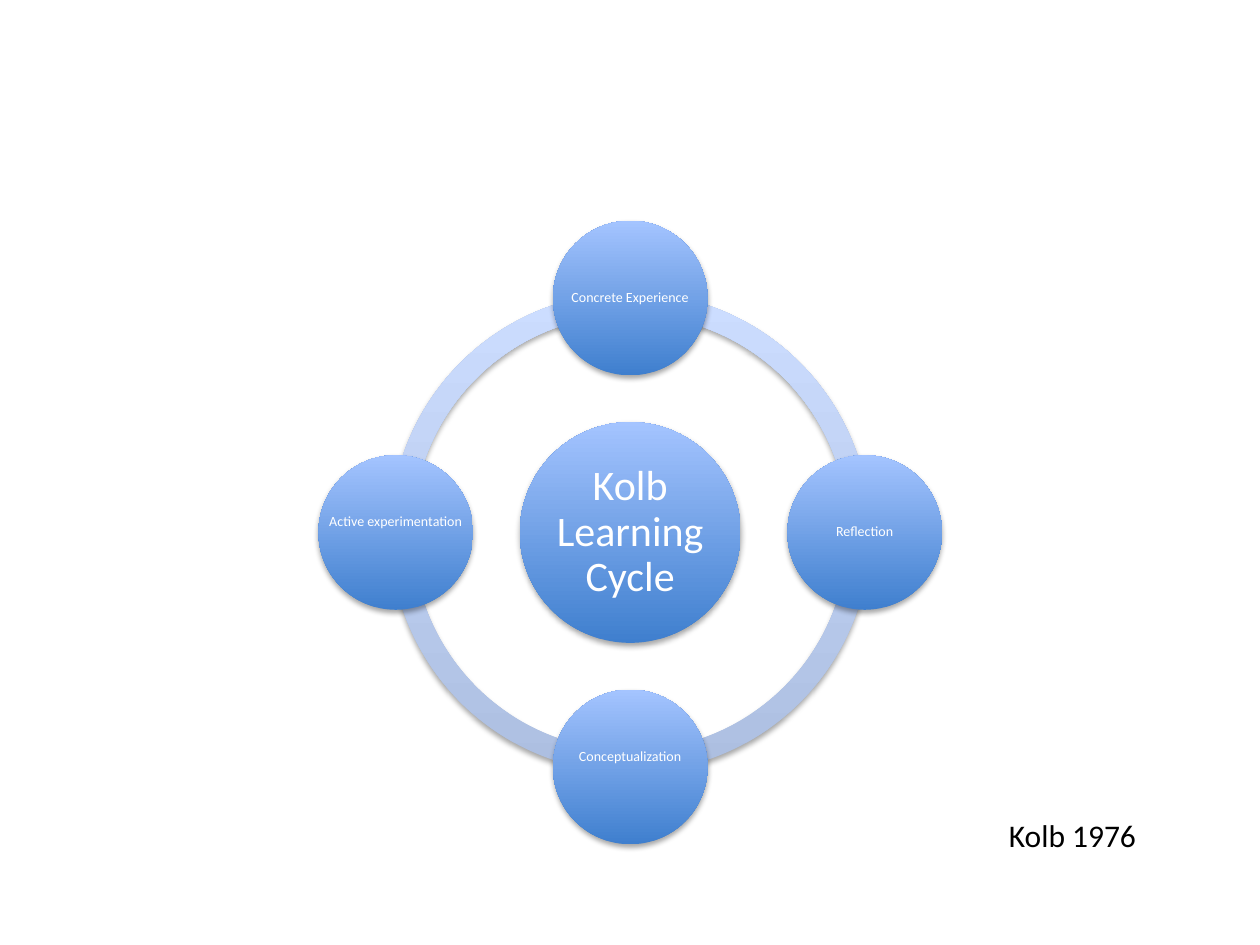
from lxml import etree
from pptx import Presentation
from pptx.dml.color import RGBColor
from pptx.enum.shapes import MSO_SHAPE
from pptx.enum.text import MSO_ANCHOR, PP_ALIGN
from pptx.oxml.ns import qn
from pptx.util import Cm, Pt

ARC, OVAL = MSO_SHAPE.BLOCK_ARC, MSO_SHAPE.OVAL
MIDDLE, TOP = MSO_ANCHOR.MIDDLE, MSO_ANCHOR.TOP
CENTER, LEFT = PP_ALIGN.CENTER, PP_ALIGN.LEFT

WHITE = RGBColor(0xFF, 0xFF, 0xFF)
BLACK = RGBColor(0x00, 0x00, 0x00)
DISC_COLORS = RGBColor(0x3F, 0x7F, 0xCE), RGBColor(0xA4, 0xC4, 0xFF)
RING_COLORS = RGBColor(0xAD, 0xBF, 0xE1), RGBColor(0xCC, 0xDD, 0xFF)

# label, direction from the hub (x, y), extra bottom inset in cm
STAGES = [
    ("Concrete Experience", 0, -1, 0),
    ("Reflection", 1, 0, 0),
    ("Conceptualization", 0, 1, 0.42),
    ("Active experimentation", -1, 0, 0.42),
]


def add_shadow(s):
    effects = s._element.spPr.get_or_add_effectLst() if hasattr(
        s._element.spPr, "get_or_add_effectLst") else etree.SubElement(
        s._element.spPr, qn("a:effectLst"))
    shadow = etree.SubElement(effects, qn("a:outerShdw"), blurRad="40000",
                              dist="23000", dir="5400000", rotWithShape="0")
    color = etree.SubElement(shadow, qn("a:srgbClr"), val="000000")
    etree.SubElement(color, qn("a:alpha"), val="35000")


def set_text(s, text, size=8, color=WHITE, align=CENTER, anchor=MIDDLE,
             wrap=False, insets=(0, 0, 0, 0), spacing=0.9):
    tf = s.text_frame
    tf.word_wrap = wrap
    tf.vertical_anchor = anchor
    tf.margin_left, tf.margin_top, tf.margin_right, tf.margin_bottom = map(Cm, insets)
    p = tf.paragraphs[0]
    p.alignment = align
    p.line_spacing = spacing
    r = p.add_run()
    r.text = text
    r.font.name = "Calibri"
    r.font.size = Pt(size)
    r.font.color.rgb = color


def add_round(shapes, kind, cx, cy, size, colors):
    """Add a shaded shape of equal sides, centred on (cx, cy), in cm."""
    s = shapes.add_shape(kind, Cm(cx - size / 2), Cm(cy - size / 2), Cm(size), Cm(size))
    s.fill.gradient()
    s.fill.gradient_angle = 90
    for stop, color in zip(s.fill.gradient_stops, colors):
        stop.color.rgb = color
    s.line.fill.background()
    add_shadow(s)
    return s


def add_cycle(slide, left, top, size):
    shapes = slide.shapes.add_group_shape().shapes
    cx, cy = left + size / 2, top + size / 2
    node = size * 0.248
    orbit = (size - node) / 2

    # Ring of four quarter arcs; angles in units of 100000/60000 degrees
    for start, end in ((108, 162), (54, 108), (0, 54), (162, 0)):
        arc = add_round(shapes, ARC, cx, cy, size * 0.77, RING_COLORS)
        for i, value in enumerate((start, end, 0.046)):
            arc.adjustments[i] = value

    # Hub
    hub = add_round(shapes, OVAL, cx, cy, size * 0.354, DISC_COLORS)
    set_text(hub, "Kolb Learning Cycle", size=24, wrap=True)

    # Stages around the hub
    for label, dx, dy, bottom in STAGES:
        s = add_round(shapes, OVAL, cx + dx * orbit, cy + dy * orbit, node, DISC_COLORS)
        set_text(s, label, insets=(0, 0, 0, bottom))


def add_credit(slide, left, top, width, height):
    s = slide.shapes.add_textbox(Cm(left), Cm(top), Cm(width), Cm(height))
    set_text(s, "Kolb 1976", size=18, color=BLACK, align=LEFT, anchor=TOP,
             insets=(0.25, 0.13, 0.25, 0.13), spacing=1.0)


def main():
    prs = Presentation()
    prs.slide_width, prs.slide_height = Cm(25.4), Cm(19.05)
    slide = prs.slides.add_slide(prs.slide_layouts[6])
    add_cycle(slide, 6.42, 4.45, 12.57)
    add_credit(slide, 20.09, 16.33, 3.1, 1.02)
    prs.save("out.pptx")


if __name__ == "__main__":
    main()
